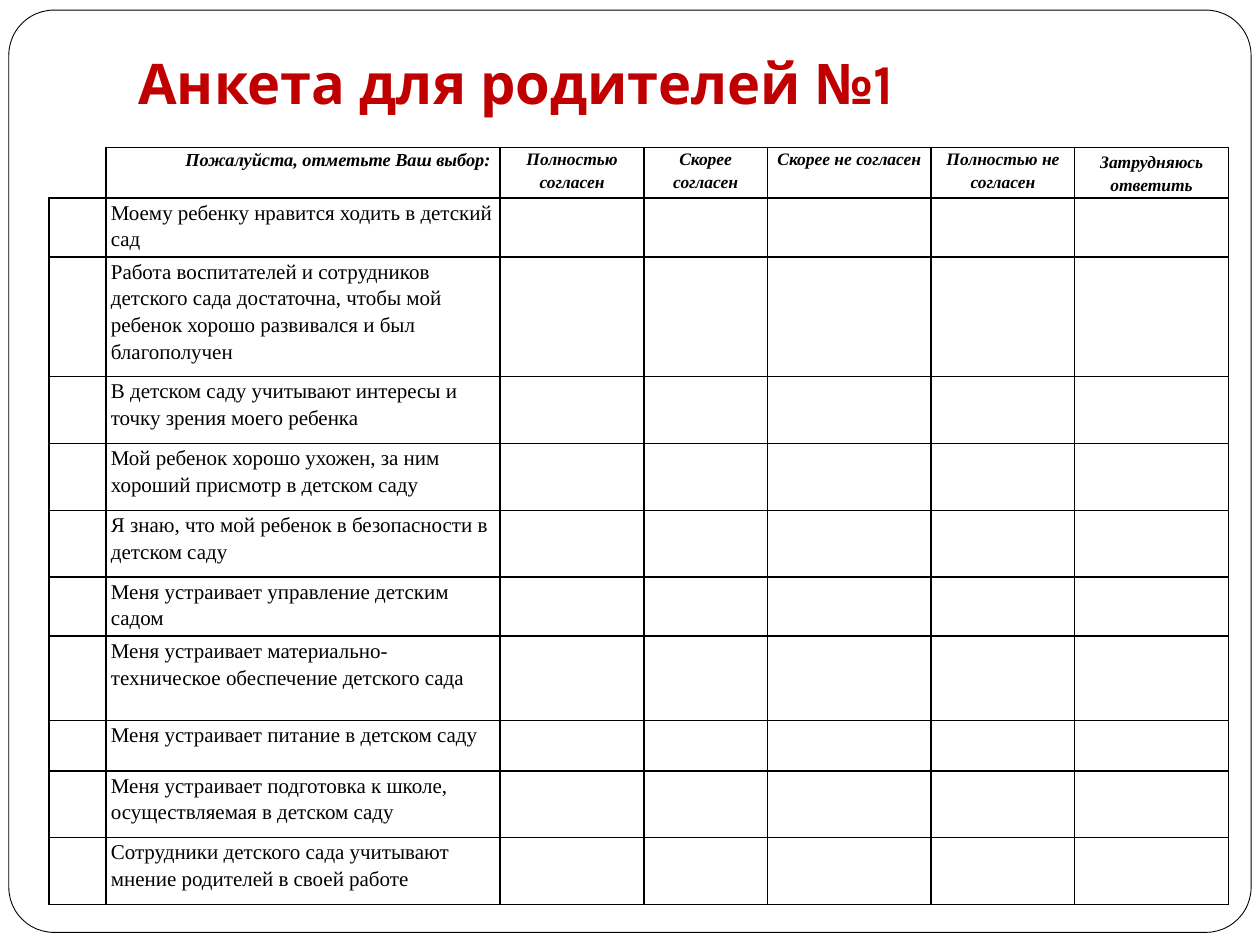
import lxml.etree
import pptx
import pptx.dml.color
import pptx.enum.shapes
import pptx.enum.text
import pptx.oxml.ns
import pptx.util

ALIGN = pptx.enum.text.PP_ALIGN
ANCHOR = pptx.enum.text.MSO_ANCHOR
Inches = pptx.util.Inches

TITLE = "Анкета для родителей №1"
PROMPT = "Пожалуйста, отметьте Ваш выбор:"
ANSWERS = [
    ("Полностью согласен", 1.14),
    ("Скорее согласен", 0.98),
    ("Скорее не согласен", 1.3),
    ("Полностью не согласен", 1.14),
    ("Затрудняюсь ответить", 1.22),
]
QUESTIONS = [
    ("Моему ребенку нравится ходить в детский сад", 0.47),
    ("Работа воспитателей и сотрудников детского сада достаточна, "
     "чтобы мой ребенок хорошо развивался и был благополучен", 0.95),
    ("В детском саду учитывают интересы и точку зрения моего ребенка", 0.53),
    ("Мой ребенок хорошо ухожен, за ним хороший присмотр в детском саду", 0.53),
    ("Я знаю, что мой ребенок в безопасности в детском саду", 0.53),
    ("Меня устраивает управление детским садом", 0.47),
    ("Меня устраивает материально-техническое обеспечение детского сада", 0.67),
    ("Меня устраивает питание в детском саду", 0.4),
    ("Меня устраивает подготовка к школе, осуществляемая в детском саду", 0.53),
    ("Сотрудники детского сада учитывают мнение родителей в своей работе", 0.53),
]

THEME = {
    "paper": "FFFFFF", "ink": "000000", "accent": "C00000",
    "title_font": "Karla", "table_font": "Times New Roman",
    "title": 32, "prompt": 10.5, "answer": 10, "question": 12,
    "frame_line": 0.5, "grid_line": 1,
}
SLIDE_SIZE = (10, 7.5)
FRAME = (0.07, 0.08, 9.86, 7.32)
TITLE_BOX = (1, 0.3, 8.5, 0.72)
TABLE_ORIGIN = (0.39, 1.17)
COLUMNS = [0.45, 3.13] + [width for _, width in ANSWERS]
ROWS = [0.4] + [height for _, height in QUESTIONS]


def color(name):
    return pptx.dml.color.RGBColor.from_string(THEME[name])


def write(text_frame, text, *, size, font="table_font", ink="ink", bold=False,
          italic=False, align=ALIGN.LEFT, line_spacing=1.15, space_after=10):
    paragraph = text_frame.paragraphs[0]
    paragraph.alignment = align
    paragraph.line_spacing = line_spacing
    paragraph.space_after = pptx.util.Pt(space_after)
    run = paragraph.add_run()
    run.text = text
    run.font.name = THEME[font]
    run.font.size = pptx.util.Pt(THEME[size])
    run.font.bold = bold
    run.font.italic = italic
    run.font.color.rgb = color(ink)


def draw_borders(cell, sides):
    properties = cell._tc.get_or_add_tcPr()
    width = str(pptx.util.Pt(THEME["grid_line"]))
    for side in sides:
        line = lxml.etree.SubElement(properties, pptx.oxml.ns.qn("a:ln" + side), w=width)
        fill = lxml.etree.SubElement(line, pptx.oxml.ns.qn("a:solidFill"))
        lxml.etree.SubElement(fill, pptx.oxml.ns.qn("a:srgbClr"), val=THEME["ink"])


def add_frame(slide):
    frame = slide.shapes.add_shape(
        pptx.enum.shapes.MSO_SHAPE.ROUNDED_RECTANGLE, *map(Inches, FRAME))
    frame.adjustments[0] = 0.049
    frame.shadow.inherit = False
    frame.fill.solid()
    frame.fill.fore_color.rgb = color("paper")
    frame.line.color.rgb = color("ink")
    frame.line.width = pptx.util.Pt(THEME["frame_line"])


def add_title(slide):
    text_frame = slide.shapes.add_textbox(*map(Inches, TITLE_BOX)).text_frame
    text_frame.word_wrap = True
    text_frame.vertical_anchor = ANCHOR.BOTTOM
    text_frame.margin_bottom = Inches(0.1)
    write(text_frame, TITLE, size="title", font="title_font", ink="accent",
          bold=True, line_spacing=1.0, space_after=0)


def add_questionnaire(slide):
    table = slide.shapes.add_table(
        len(ROWS), len(COLUMNS), *map(Inches, TABLE_ORIGIN),
        Inches(sum(COLUMNS)), Inches(sum(ROWS))).table
    table.first_row = False
    table.horz_banding = False
    for column, width in zip(table.columns, COLUMNS):
        column.width = Inches(width)
    for row, height in zip(table.rows, ROWS):
        row.height = Inches(height)

    corner = table.cell(0, 0)
    for cell in table.iter_cells():
        cell.margin_left = cell.margin_right = Inches(0.04)
        cell.margin_top = cell.margin_bottom = 0
        draw_borders(cell, "RB" if cell == corner else "LRTB")
        cell.fill.background()
    draw_header(table)
    for row, (question, _) in enumerate(QUESTIONS, 1):
        write(table.cell(row, 1).text_frame, question, size="question")


def draw_header(table):
    write(table.cell(0, 1).text_frame, PROMPT + " ", size="prompt",
          bold=True, italic=True, align=ALIGN.RIGHT)
    for column, (answer, _) in enumerate(ANSWERS, 2):
        write(table.cell(0, column).text_frame, answer, size="answer",
              bold=True, italic=True, align=ALIGN.CENTER)
    table.cell(0, len(COLUMNS) - 1).vertical_anchor = ANCHOR.MIDDLE


def main():
    presentation = pptx.Presentation()
    presentation.slide_width, presentation.slide_height = map(Inches, SLIDE_SIZE)
    slide = presentation.slides.add_slide(presentation.slide_layouts[6])
    add_frame(slide)
    add_title(slide)
    add_questionnaire(slide)
    presentation.save("out.pptx")


if __name__ == "__main__":
    main()
